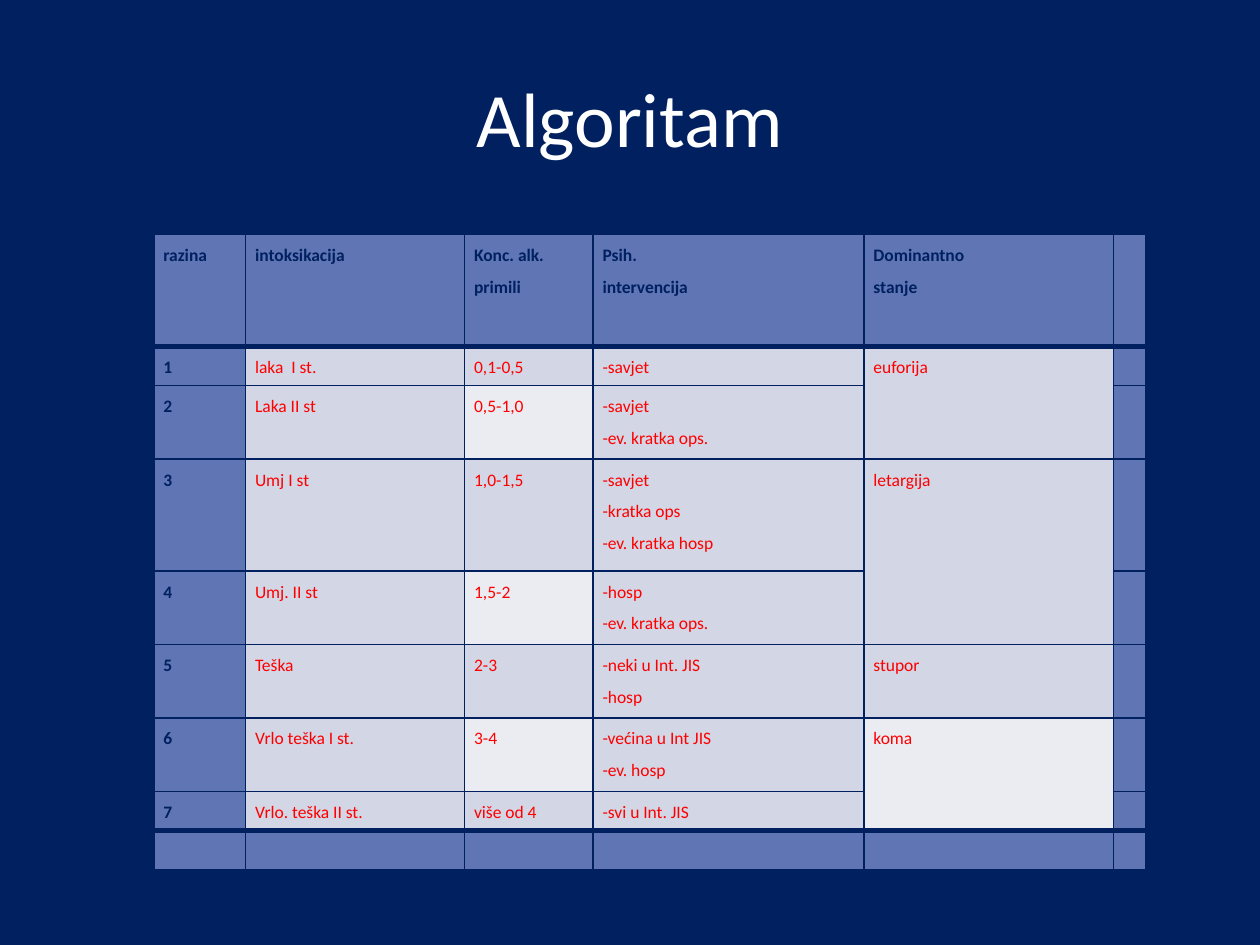
from dataclasses import dataclass

from lxml.etree import SubElement
from pptx import Presentation
from pptx.dml.color import RGBColor as RGB
from pptx.enum.text import MSO_ANCHOR as Anchor, PP_ALIGN as Align
from pptx.oxml.ns import qn
from pptx.util import Pt


@dataclass(frozen=True)
class Theme:
    font: str = "Calibri"
    navy: str = "002060"
    blue: str = "6076B4"
    mist: str = "D2D6E5"
    pale: str = "EAECF2"
    red: str = "FF0000"
    white: str = "FFFFFF"
    title: int = 44
    body: int = 10
    thin: int = 1
    thick: int = 3


THEME = Theme()
COLS = [52.4, 125.2, 73.4, 154.8, 142.6, 18.4]
ROWS = [64, 22.3, 42, 64, 42, 42, 42, 22.3, 22.3]
DATA = [
    ["razina", "intoksikacija", "Konc. alk.\nprimili",
     "Psih.\nintervencija", "Dominantno\nstanje"],
    ["1", "laka  I st.", "0,1-0,5", "-savjet", "euforija"],
    ["2", "Laka II st", "0,5-1,0", "-savjet\n-ev. kratka ops.", ""],
    ["3", "Umj I st", "1,0-1,5",
     "-savjet\n-kratka ops\n-ev. kratka hosp", "letargija"],
    ["4", "Umj. II st", "1,5-2", "-hosp\n-ev. kratka ops.", ""],
    ["5", "Teška", "2-3", "-neki u Int. JIS\n-hosp", "stupor"],
    ["6", "Vrlo teška I st.", "3-4", "-većina u Int JIS\n-ev. hosp", "koma"],
    ["7", "Vrlo. teška II st.", "više od 4", "-svi u Int. JIS", ""],
    [],
]
STATE = 4
SPANS = [1, 3, 6]
PALE = {(2, 2), (4, 2), (6, 2), (6, STATE)}


def style(frame, size, color, bold=False):
    for para in frame.paragraphs:
        for run in para.runs:
            font = run.font
            font.name, font.size, font.bold = THEME.font, Pt(size), bold
            font.color.rgb = RGB.from_string(color)


def edge(cell, side, width):
    line = SubElement(cell._tc.get_or_add_tcPr(), qn(f"a:ln{side}"),
                      w=str(Pt(width)))
    fill = SubElement(line, qn("a:solidFill"))
    SubElement(fill, qn("a:srgbClr"), val=THEME.navy)


def fill_cell(cell, row, col, text):
    last = len(ROWS) - 1
    frame_cell = row in (0, last) or col in (0, len(COLS) - 1)
    top = THEME.thick if row in (1, last) else THEME.thin
    base = THEME.thick if row in (0, last - 1) else THEME.thin
    for side, width in zip("LRTB", (THEME.thin, THEME.thin, top, base)):
        edge(cell, side, width)
    tone = THEME.pale if (row, col) in PALE else THEME.mist
    cell.fill.solid()
    cell.fill.fore_color.rgb = RGB.from_string(
        THEME.blue if frame_cell else tone)
    cell.margin_left = cell.margin_right = Pt(5.4)
    cell.margin_top = cell.margin_bottom = 0
    if text:
        cell.text_frame.text = text
        for para in cell.text_frame.paragraphs:
            para.line_spacing = 1.5
        style(cell.text_frame, THEME.body,
              THEME.navy if frame_cell else THEME.red, frame_cell)


def add_title(slide, box, text):
    frame = slide.shapes.add_textbox(*map(Pt, box)).text_frame
    frame.word_wrap = True
    frame.vertical_anchor = Anchor.MIDDLE
    frame.text = text
    frame.paragraphs[0].alignment = Align.CENTER
    style(frame, THEME.title, THEME.white)


def add_grid(slide, box):
    left, top, width, height = box
    table = slide.shapes.add_table(
        len(ROWS), len(COLS), *map(Pt, box)).table
    for col, part in zip(table.columns, COLS):
        col.width = Pt(round(width * part / sum(COLS), 2))
    for row, part in zip(table.rows, ROWS):
        row.height = Pt(round(height * part / sum(ROWS), 2))
    for r, texts in enumerate(DATA):
        for c in range(len(COLS)):
            text = texts[c] if c < len(texts) else ""
            fill_cell(table.cell(r, c), r, c, text)
    for r in SPANS:
        table.cell(r, STATE).merge(table.cell(r + 1, STATE))


def main():
    deck = Presentation()
    deck.slide_width, deck.slide_height = Pt(720), Pt(540)
    slide = deck.slides.add_slide(deck.slide_layouts[6])
    back = slide.background.fill
    back.solid()
    back.fore_color.rgb = RGB.from_string(THEME.navy)
    add_title(slide, (36, 21.6, 648, 90), "Algoritam")
    add_grid(slide, (88, 134, sum(COLS), sum(ROWS)))
    deck.save("out.pptx")


if __name__ == "__main__":
    main()
